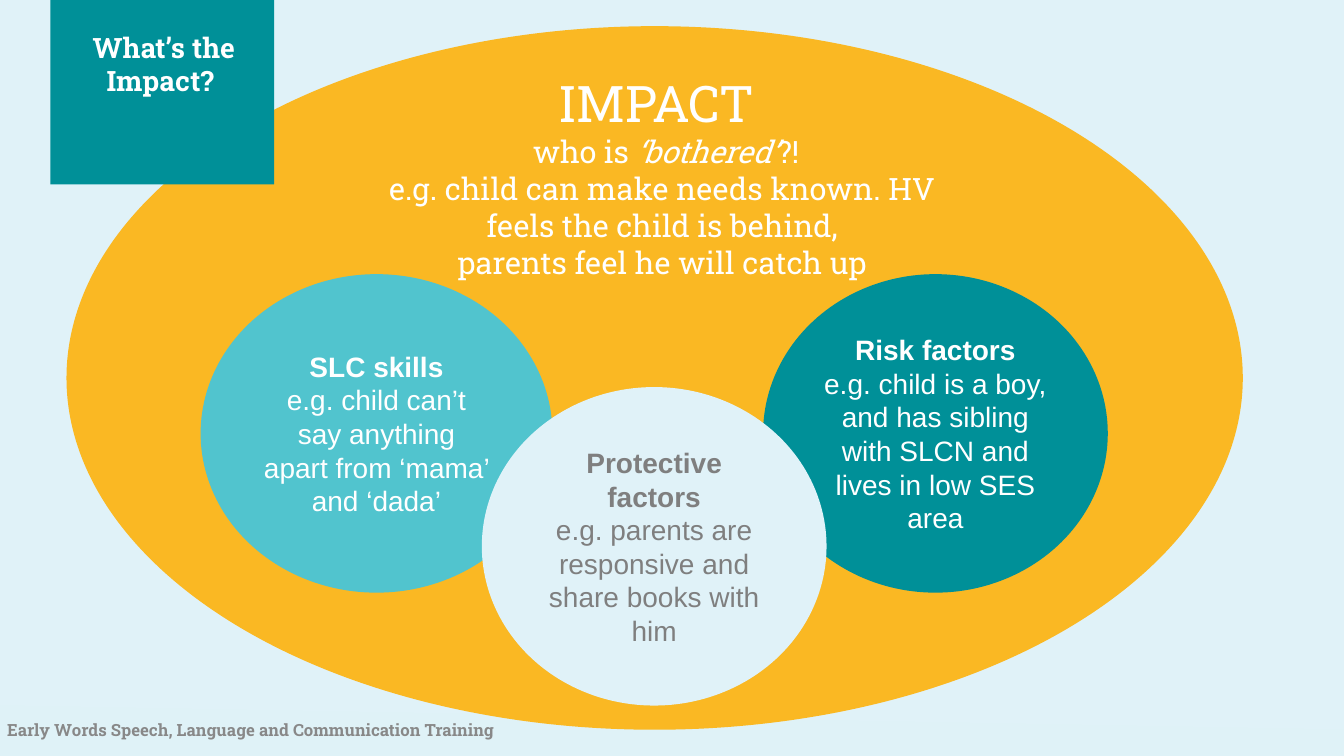
import pptx
import pptx.util
import pptx.dml.color
import pptx.enum.shapes
import pptx.enum.text

Pt = pptx.util.Pt
SHAPES = pptx.enum.shapes.MSO_SHAPE
ALIGN = pptx.enum.text.PP_ALIGN
ANCHOR = pptx.enum.text.MSO_ANCHOR

SLIDE_SIZE = (960, 540)
PALE, TEAL, AQUA, AMBER = "E0F2F8", "009098", "51C4CE", "FAB823"
WHITE, GREY, FOOTER_GREY = "FFFFFF", "7F7F7F", "888888"
SLAB = "Roboto Slab"
INSET = (7.2, 3.6)

FOOTER_BAND = [(0, 504), (0, 540), (960, 540), (960, 521.28)]
IMPACT_OVAL = (47.52, 18.72, 840.24, 502.56)
TITLE_BLOCK = (36, 0, 159.84, 131.76)

FACTORS = [
    ((545.04, 195.84, 246.24, 227.52), TEAL, WHITE, "Risk factors",
     "e.g. child is a boy, and has sibling with SLCN and lives in low SES area"),
    ((143.28, 195.84, 251.28, 227.52), AQUA, WHITE, "SLC skills",
     "e.g. child can’t say anything apart from ‘mama’ and ‘dada’"),
    ((344.16, 276.48, 246.24, 227.52), PALE, GREY, "Protective factors",
     "e.g. parents are responsive and share books with him"),
]

IMPACT_BOX = (244.08, 48.24, 457.92, 179.28)
IMPACT_LINES = [
    [("IMPACT ", {"size": 36})],
    [(" who is ", {}), ("‘bothered’", {"italic": True}), ("?!", {})],
    [("e.g. child can make needs known. HV feels the child is behind,", {})],
    [("parents feel he will catch up", {})],
]
TITLE_BOX = (36, 21.6, 162, 110.16)
TITLE = "What’s the Impact? "
FOOTER_BOX = (5.04, 514.08, 615.6, 14.4)
FOOTER = "Early Words Speech, Language and Communication Training"


def color(hex_code):
    return pptx.dml.color.RGBColor.from_string(hex_code)


def paint(shape, fill):
    shape.shadow.inherit = False
    shape.fill.solid()
    shape.fill.fore_color.rgb = color(fill)
    shape.line.fill.background()


def add_filled(slide, preset, box, fill):
    shape = slide.shapes.add_shape(preset, *map(Pt, box))
    paint(shape, fill)
    return shape


def write(frame, lines, font, size, ink, align=ALIGN.CENTER, inset=INSET, bold=False):
    frame.word_wrap = True
    frame.margin_left = frame.margin_right = Pt(inset[0])
    frame.margin_top = frame.margin_bottom = Pt(inset[1])
    for index, pieces in enumerate(lines):
        paragraph = frame.add_paragraph() if index else frame.paragraphs[0]
        paragraph.alignment = align
        for words, style in pieces:
            run = paragraph.add_run()
            run.text = words
            run.font.name = font
            run.font.size = Pt(style.get("size", size))
            run.font.bold = style.get("bold", bold)
            run.font.italic = style.get("italic", False)
            run.font.color.rgb = color(ink)


def add_text(slide, box, lines, size, ink, **layout):
    frame = slide.shapes.add_textbox(*map(Pt, box)).text_frame
    write(frame, lines, SLAB, size, ink, **layout)


def main():
    deck = pptx.Presentation()
    deck.slide_width, deck.slide_height = map(Pt, SLIDE_SIZE)
    slide = deck.slides.add_slide(deck.slide_layouts[6])
    slide.background.fill.solid()
    slide.background.fill.fore_color.rgb = color(PALE)

    corners = [(Pt(x), Pt(y)) for x, y in FOOTER_BAND]
    outline = slide.shapes.build_freeform(*corners[0])
    outline.add_line_segments(corners[1:], close=True)
    paint(outline.convert_to_shape(), "DFF2F7")

    add_filled(slide, SHAPES.OVAL, IMPACT_OVAL, AMBER)
    for box, fill, ink, heading, example in FACTORS:
        frame = add_filled(slide, SHAPES.OVAL, box, fill).text_frame
        frame.vertical_anchor = ANCHOR.MIDDLE
        write(frame, [[(heading, {"bold": True})], [(example, {})]], "Arial", 20, ink)

    add_text(slide, IMPACT_BOX, IMPACT_LINES, 22, WHITE)
    add_filled(slide, SHAPES.RECTANGLE, TITLE_BLOCK, TEAL)
    add_text(slide, TITLE_BOX, [[(TITLE, {})]], 20, WHITE, inset=(0, 0), bold=True)
    add_text(slide, FOOTER_BOX, [[(FOOTER, {})]], 12, FOOTER_GREY,
             align=ALIGN.LEFT, inset=(0, 0), bold=True)
    deck.save("out.pptx")


if __name__ == "__main__":
    main()
